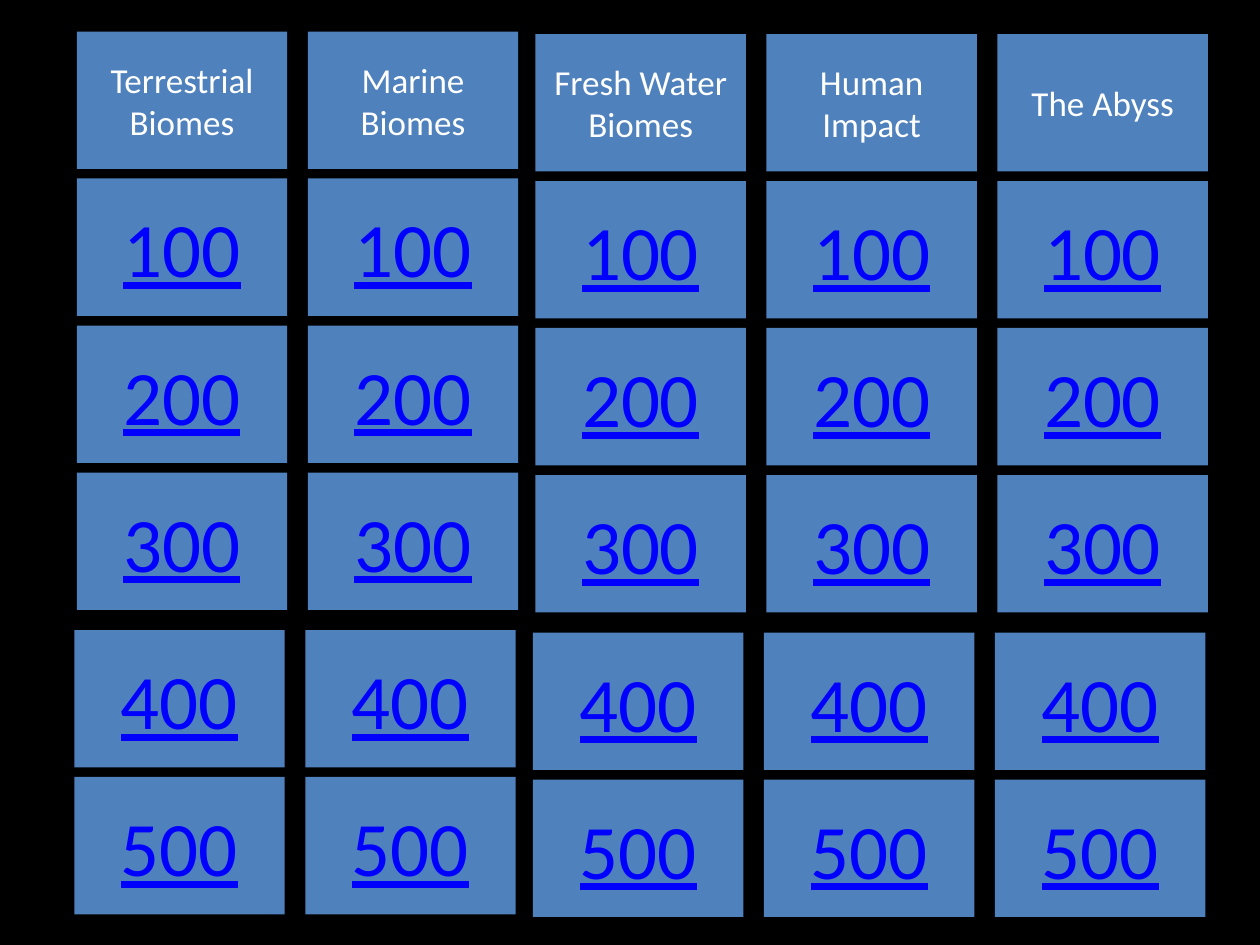
from dataclasses import dataclass

from lxml import etree
from pptx import Presentation
from pptx.dml.color import RGBColor
from pptx.enum.shapes import MSO_SHAPE
from pptx.enum.text import MSO_ANCHOR, MSO_AUTO_SIZE, PP_ALIGN
from pptx.oxml.ns import qn
from pptx.util import Inches, Pt

RECT = MSO_SHAPE.RECTANGLE
MIDDLE = MSO_ANCHOR.MIDDLE
NO_FIT = MSO_AUTO_SIZE.NONE
CENTER = PP_ALIGN.CENTER

TITLE_ONLY = 5
CARD_W, CARD_H = 1.67, 1.09
COL_STEP, ROW_STEP = 5.5 / 3, 3.5 / 3
LOW_SHIFT, LOW_DROP = -0.02, 4.75
UPPER_POINTS = ("100", "200", "300")
LOWER_POINTS = ("400", "500")
BOARDS = (
    (0.61, 0.25, ("Terrestrial Biomes", "Marine Biomes")),
    (4.25, 0.27, ("Fresh Water Biomes", "Human Impact", "The Abyss")),
)


@dataclass(frozen=True)
class Theme:
    """Colours, font and type sizes of the game board."""

    back: RGBColor = RGBColor(0x00, 0x00, 0x00)
    card: RGBColor = RGBColor(0x4F, 0x81, 0xBD)
    heading: RGBColor = RGBColor(0xFF, 0xFF, 0xFF)
    points: RGBColor = RGBColor(0x00, 0x00, 0xFF)
    font: str = "Calibri"
    heading_size: int = 20
    points_size: int = 44


THEME = Theme()
HEADING = {"size": Pt(THEME.heading_size), "underline": False}
POINTS = {"size": Pt(THEME.points_size), "underline": True}


def set_attrs(obj, values):
    """Set each named attribute on an object."""
    for name, value in values.items():
        setattr(obj, name, value)


def add_shadow(sp):
    """Give a card a soft black shadow straight below it."""
    sp.shadow.inherit = False
    effects = sp.element.spPr.find(qn("a:effectLst"))
    outer = etree.SubElement(
        effects, qn("a:outerShdw"), blurRad=str(Pt(3.5)), dist=str(Pt(2.2)),
        dir="5400000", rotWithShape="0",
    )
    colour = etree.SubElement(outer, qn("a:srgbClr"), val=str(THEME.back))
    etree.SubElement(colour, qn("a:alpha"), val="32000")


def format_card(sp, left, top, text, font, colour):
    """Place, fill and label one card."""
    set_attrs(sp, {
        "left": Inches(left), "top": Inches(top),
        "width": Inches(CARD_W), "height": Inches(CARD_H),
    })
    sp.fill.solid()
    sp.fill.fore_color.rgb = THEME.card
    sp.line.fill.background()
    add_shadow(sp)
    tf = sp.text_frame
    set_attrs(tf, {
        "word_wrap": True, "auto_size": NO_FIT, "vertical_anchor": MIDDLE,
    })
    p = tf.paragraphs[0]
    p.alignment = CENTER
    r = p.add_run()
    r.text = text
    set_attrs(r.font, {"name": THEME.font, **font})
    r.font.color.rgb = colour


def add_card(s, *card):
    """Add a rectangle and format it as a card."""
    format_card(s.shapes.add_shape(RECT, 0, 0, 0, 0), *card)


def column_cards(left, top, heading):
    """Yield the cards of a column, points first and heading last."""
    for row, text in enumerate(UPPER_POINTS, 1):
        yield left, top + row * ROW_STEP, text, POINTS, THEME.points
    for row, text in enumerate(LOWER_POINTS):
        y = top + LOW_DROP + row * ROW_STEP
        yield left + LOW_SHIFT, y, text, POINTS, THEME.points
    yield left, top, heading, HEADING, THEME.heading


def main():
    """Build the game board slide."""
    prs = Presentation()
    prs.slide_width, prs.slide_height = Inches(10), Inches(7.5)
    s = prs.slides.add_slide(prs.slide_layouts[TITLE_ONLY])
    s.background.fill.solid()
    s.background.fill.fore_color.rgb = THEME.back
    cards = [
        card
        for left, top, headings in BOARDS
        for col, heading in enumerate(headings)
        for card in column_cards(left + col * COL_STEP, top, heading)
    ]
    format_card(s.shapes.title, *cards[0])
    for card in cards[1:]:
        add_card(s, *card)
    prs.save("out.pptx")


if __name__ == "__main__":
    main()
